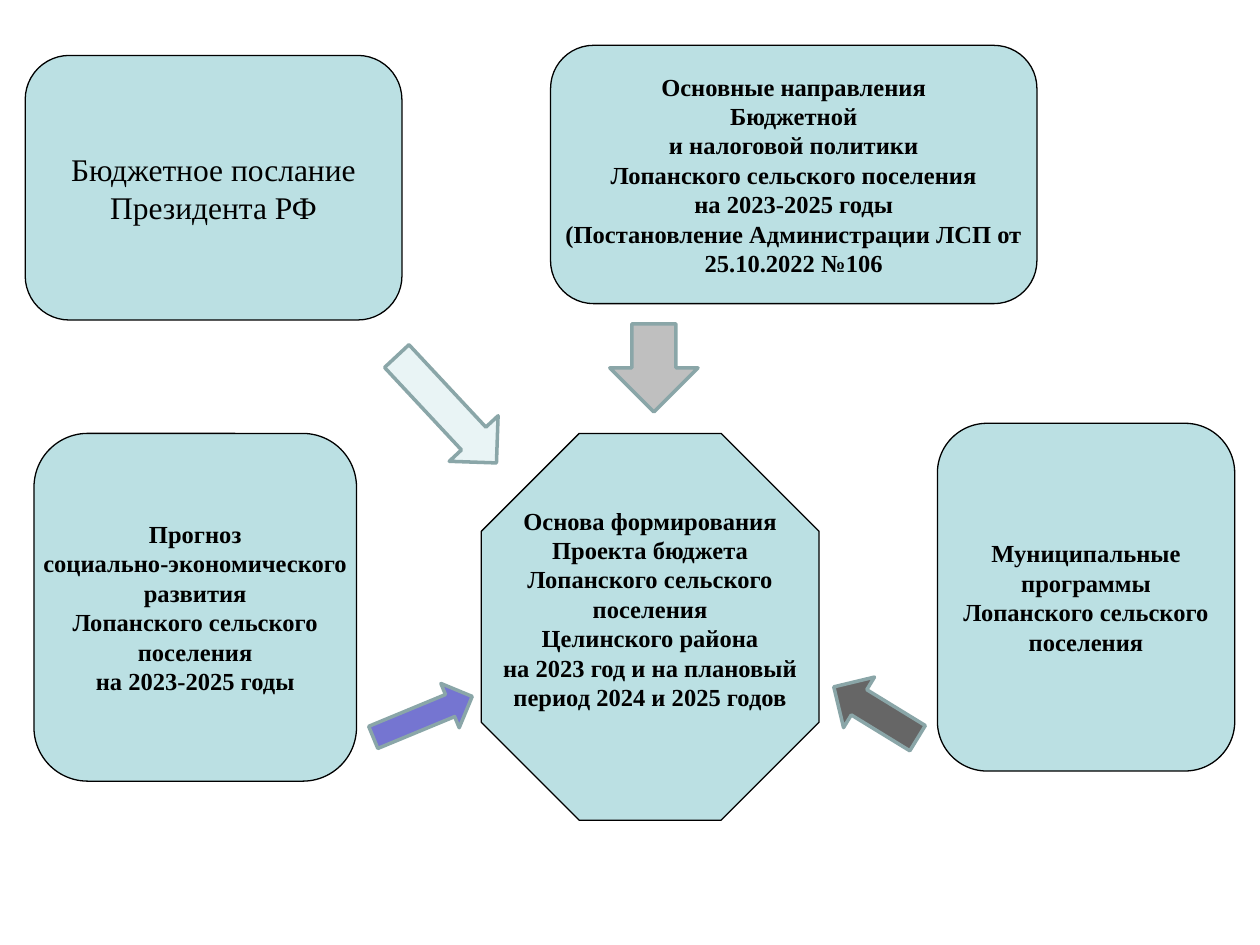
from pptx import Presentation
from pptx.dml.color import RGBColor
from pptx.enum.shapes import MSO_SHAPE as Shape
from pptx.enum.text import MSO_ANCHOR as Anchor, PP_ALIGN as Align
from pptx.util import Inches, Pt

# Grid of 100 columns by 75 rows; boxes are (column, row, columns, rows)
COLUMNS, ROWS = 100, 75
CELL = Inches(0.1)
FONT = "Times New Roman"
COLORS = {
    "block": "BBE0E3",
    "outline": "000000",
    "text": "000000",
    "arrow_line": "8AA6A8",
    "message_arrow": "E9F4F5",
    "policy_arrow": "BFBFBF",
    "forecast_arrow": "7575D1",
    "programme_arrow": "666666",
}


def color(name):
    return RGBColor.from_string(COLORS[name])


def add_figure(page, kind, box, fill, line, width):
    """Place a filled, outlined shape in a grid box."""
    figure = page.shapes.add_shape(kind, *(round(part * CELL) for part in box))
    figure.shadow.inherit = False
    figure.fill.solid()
    figure.fill.fore_color.rgb = color(fill)
    figure.line.color.rgb = color(line)
    figure.line.width = Pt(width)
    return figure


def add_block(page, kind, box, lines, size=14, bold=True):
    """Place a block with centred lines of text."""
    block = add_figure(page, kind, box, "block", "outline", 0.75)
    frame = block.text_frame
    frame.word_wrap = False
    frame.vertical_anchor = Anchor.MIDDLE
    for index, line in enumerate(lines):
        para = frame.add_paragraph() if index else frame.paragraphs[0]
        para.alignment = Align.CENTER
        span = para.add_run()
        span.text = line
        span.font.name = FONT
        span.font.size = Pt(size)
        span.font.bold = bold
        span.font.color.rgb = color("text")
    return block


def add_arrow(page, kind, box, fill, rotation=0):
    """Place a block arrow pointing towards the centre."""
    arrow = add_figure(page, kind, box, fill, "arrow_line", 2)
    arrow.rotation = rotation


def add_arrows(page):
    add_arrow(page, Shape.RIGHT_ARROW, (29.3, 55, 8.5, 3.8), "forecast_arrow", 337.5)
    add_arrow(page, Shape.DOWN_ARROW, (32.8, 26.7, 5.3, 11.6), "message_arrow", 317)
    add_arrow(page, Shape.DOWN_ARROW, (48.4, 25.7, 7, 7), "policy_arrow")
    add_arrow(page, Shape.LEFT_ARROW, (65.6, 54.2, 7.8, 4.7), "programme_arrow", 31.5)


def add_sources(page):
    """Place the four documents the budget is based on."""
    add_block(page, Shape.FLOWCHART_ALTERNATE_PROCESS, (43.7, 3.6, 38.6, 20.5), [
        "Основные направления",
        "Бюджетной",
        "и налоговой политики",
        "Лопанского сельского поселения",
        "на 2023-2025 годы",
        "(Постановление Администрации ЛСП от",
        "25.10.2022 №106",
    ])
    add_block(page, Shape.ROUNDED_RECTANGLE, (2, 4.4, 29.9, 21), [
        "Бюджетное послание",
        "Президента РФ",
    ], size=18, bold=False)
    add_block(page, Shape.ROUNDED_RECTANGLE, (2.7, 34.4, 25.6, 27.6), [
        "Прогноз",
        "социально-экономического",
        "развития",
        "Лопанского сельского",
        "поселения",
        "на 2023-2025 годы",
    ])
    add_block(page, Shape.ROUNDED_RECTANGLE, (74.4, 33.6, 23.6, 27.6), [
        "Муниципальные",
        "программы",
        "Лопанского сельского",
        "поселения",
    ])


def add_centre(page):
    """Place the octagon with the draft budget."""
    octagon = add_block(page, Shape.OCTAGON, (38.2, 34.4, 26.8, 30.7), [
        "Основа формирования",
        "Проекта бюджета",
        "Лопанского сельского",
        "поселения",
        "Целинского района",
        "на 2023 год и на плановый",
        "период 2024 и 2025 годов",
    ])
    octagon.adjustments[0] = 0.29
    # The text sits a little above the middle
    octagon.text_frame.margin_bottom = Inches(0.34)


def main():
    deck = Presentation()
    deck.slide_width = COLUMNS * CELL
    deck.slide_height = ROWS * CELL
    page = deck.slides.add_slide(deck.slide_layouts[6])
    add_arrows(page)
    add_sources(page)
    add_centre(page)
    deck.save("out.pptx")


if __name__ == "__main__":
    main()
